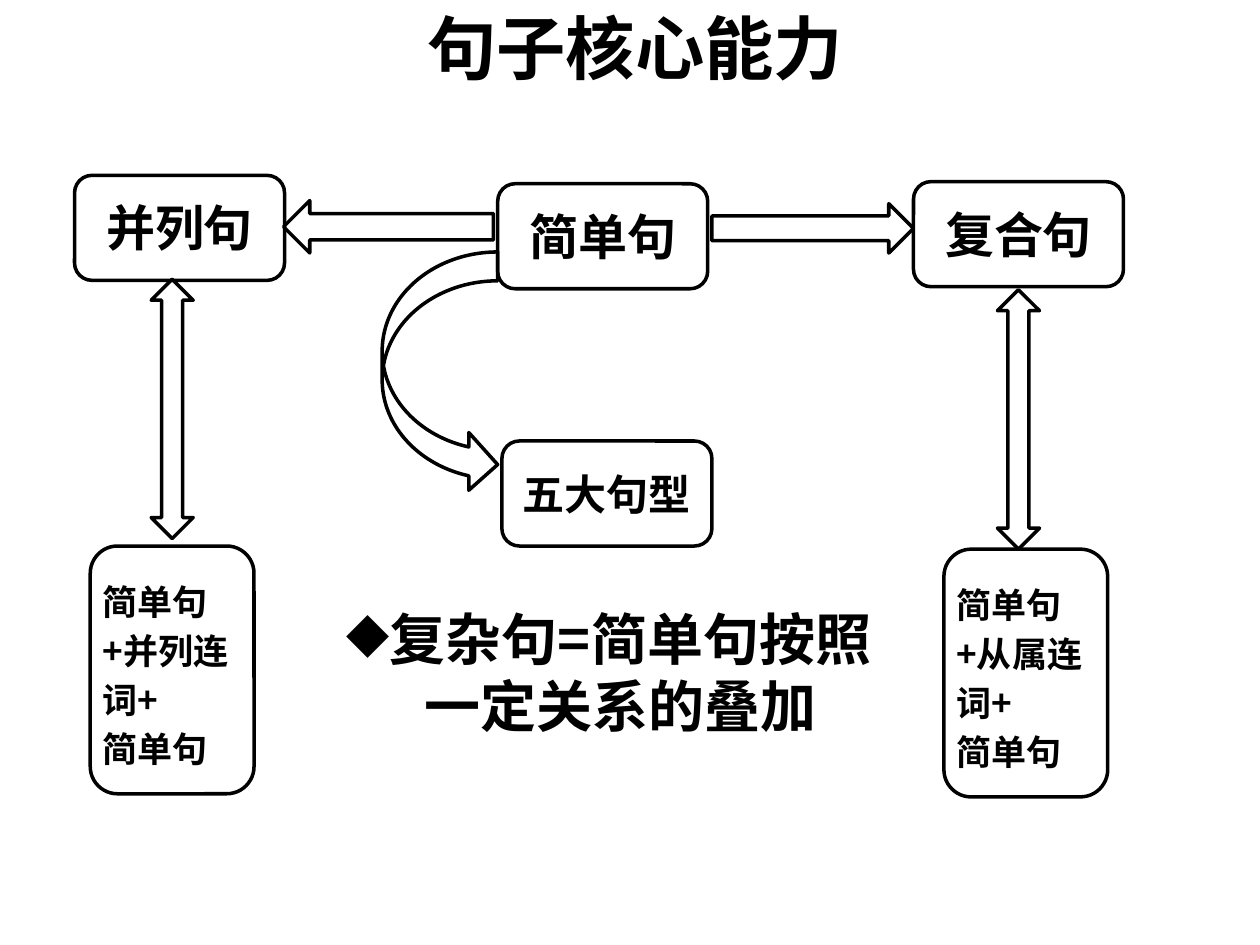
from dataclasses import dataclass
from lxml import etree
from pptx import Presentation
from pptx import util as u
from pptx.dml.color import RGBColor
from pptx.enum import shapes, text
from pptx.oxml.ns import qn

COLS, ROWS = 120, 90
Kind = shapes.MSO_SHAPE
Align = text.PP_ALIGN


@dataclass(frozen=True)
class Theme:
    ink: RGBColor = RGBColor(0, 0, 0)
    font: str = "Noto Sans CJK SC"
    note_font: str = "Noto Sans CJK JP"
    line: float = 2
    title: float = 39.6
    note: float = 32
    term: float = 28
    core: float = 24
    detail: float = 20
    lead: float = 28


@dataclass(frozen=True)
class Area:
    col: float
    row: float
    wide: float
    high: float

    def inset(self, dx: float, dy: float) -> "Area":
        return Area(self.col + dx, self.row + dy,
                    self.wide - 2 * dx, self.high - 2 * dy)


@dataclass(frozen=True)
class Node:
    label: str
    area: Area
    size: float
    dx: float = 0
    dy: float = 2
    align: Align = Align.CENTER
    lead: float | None = None


@dataclass(frozen=True)
class Arrow:
    kind: Kind
    area: Area


theme = Theme()
deck = Presentation()
deck.slide_width, deck.slide_height = u.Inches(10), u.Inches(7.5)
slide = deck.slides.add_slide(deck.slide_layouts[6])


def place(area: Area) -> tuple[int, int, int, int]:
    col, row = deck.slide_width / COLS, deck.slide_height / ROWS
    return (round(area.col * col), round(area.row * row),
            round(area.wide * col), round(area.high * row))


def outline(kind: Kind, area: Area) -> None:
    shape = slide.shapes.add_shape(kind, *place(area))
    shape.shadow.inherit = False
    shape.fill.background()
    shape.line.color.rgb = theme.ink
    shape.line.width = u.Pt(theme.line)


def write(words: str, area: Area, size: float, align: Align = Align.CENTER,
          font: str = theme.font, lead: float | None = None):
    frame = slide.shapes.add_textbox(*place(area)).text_frame
    frame.word_wrap = True
    frame.text = words
    for para in frame.paragraphs:
        para.alignment = align
        if lead:
            para.line_spacing = u.Pt(lead)
        for run in para.runs:
            run.font.size = u.Pt(size)
            run.font.bold = True
            run.font.name = font
            run.font.color.rgb = theme.ink
            east = etree.SubElement(run.font._element, qn("a:ea"))
            east.set("typeface", font)
    return frame


def bullet(para, mark: str, hang: float) -> None:
    props = para._p.get_or_add_pPr()
    props.set("marL", str(u.Inches(hang)))
    props.set("indent", str(-u.Inches(hang)))
    etree.SubElement(props, qn("a:buChar")).set("char", mark)


def draw(node: Node) -> None:
    outline(Kind.ROUNDED_RECTANGLE, node.area)
    write(node.label, node.area.inset(node.dx, node.dy), node.size,
          node.align, lead=node.lead)


def term(label: str, col: float, row: float) -> Node:
    return Node(label, Area(col, row, 20, 10), theme.term, 1.5, 1.56)


def detail(link: str, col: float, row: float) -> Node:
    return Node(f"简单句+{link}连词+\n简单句", Area(col, row, 15.6, 23.6),
                theme.detail, align=Align.LEFT, lead=theme.lead)


NODES = [
    term("简单句", 47.4, 17.5),
    term("并列句", 7.1, 16.7),
    term("复合句", 87, 17.3),
    Node("五大句型", Area(47.8, 42, 20, 10), theme.core),
    detail("并列", 8.6, 52),
    detail("从属", 89.9, 52.3),
]
ARROWS = [
    Arrow(Kind.CURVED_RIGHT_ARROW, Area(36.4, 24, 11, 23)),
    Arrow(Kind.LEFT_ARROW, Area(27, 19.1, 20, 5)),
    Arrow(Kind.RIGHT_ARROW, Area(67.8, 19.4, 19.2, 4.7)),
    Arrow(Kind.UP_DOWN_ARROW, Area(14.4, 26.6, 4, 24.7)),
    Arrow(Kind.UP_DOWN_ARROW, Area(95, 27.6, 4, 24.7)),
]

title = write("句子核心能力", Area(3, 1, 115, 7), theme.title)
title.vertical_anchor = text.MSO_ANCHOR.MIDDLE
for node in NODES:
    draw(node)
for arrow in ARROWS:
    outline(arrow.kind, arrow.area)
note = write("复杂句=简单句按照一定关系的叠加", Area(30, 57, 56, 14.2),
             theme.note, font=theme.note_font)
bullet(note.paragraphs[0], "◆", 0.19)

deck.save("out.pptx")
